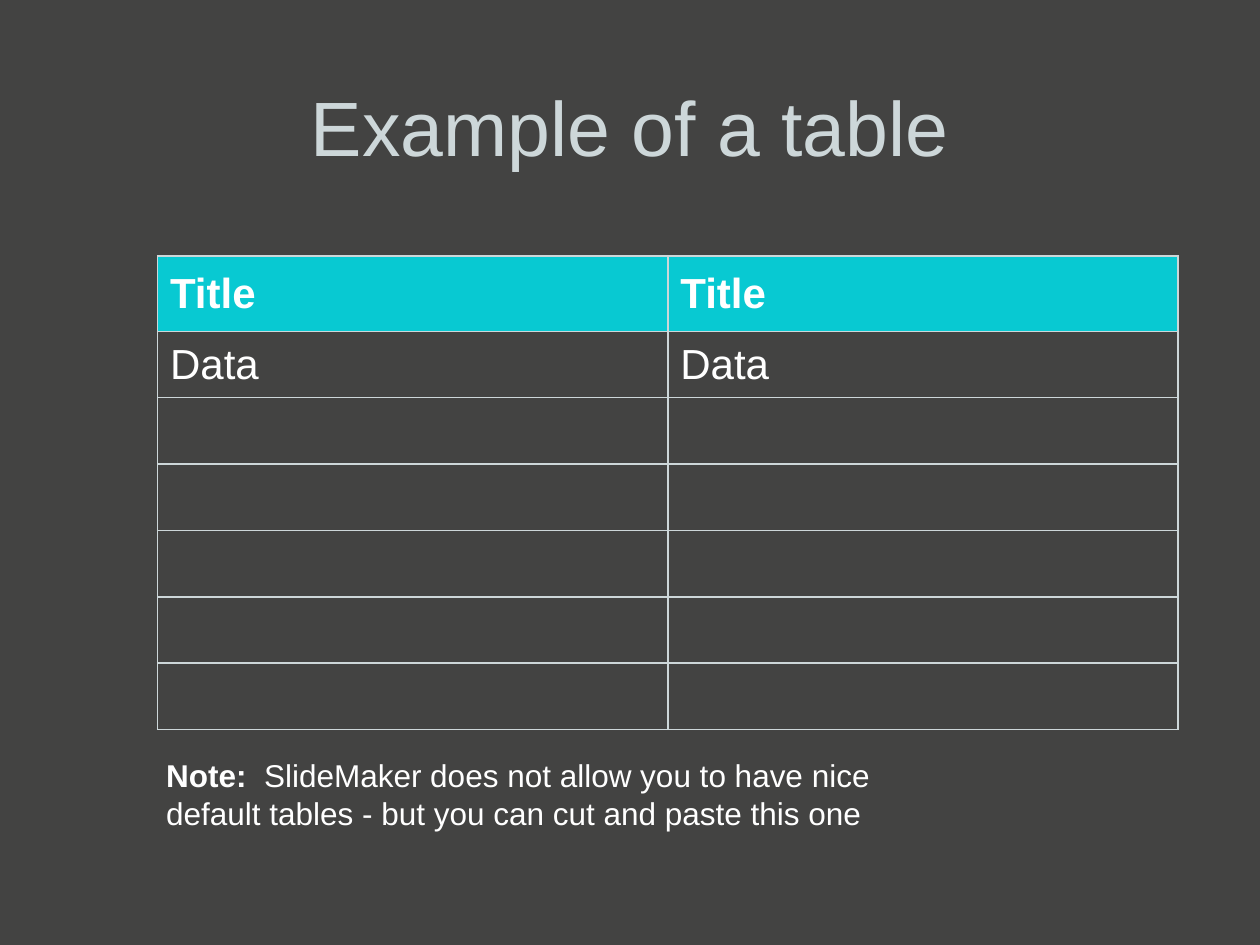
from lxml import etree
from pptx import Presentation
from pptx import util as u
from pptx.dml.color import RGBColor
from pptx.enum import text
from pptx.oxml import ns

COLOURS = {"background": "434342", "pale": "CDD7D9", "header": "08C9D2", "white": "FFFFFF"}
FONT = "Arial"


def add_span(para, words, size, colour, bold=False):
    span = para.add_run()
    span.text = words
    span.font.name = FONT
    span.font.size = u.Pt(size)
    span.font.bold = bold
    span.font.color.rgb = RGBColor.from_string(COLOURS[colour])


def add_borders(cell, colour, width):
    properties = cell._tc.get_or_add_tcPr()
    for index, side in enumerate(("lnL", "lnR", "lnT", "lnB")):
        line = etree.Element(ns.qn("a:" + side), w=str(u.Pt(width)))
        fill = etree.SubElement(line, ns.qn("a:solidFill"))
        etree.SubElement(fill, ns.qn("a:srgbClr"), val=COLOURS[colour])
        properties.insert(index, line)


deck = Presentation()
deck.slide_width, deck.slide_height = u.Inches(10), u.Inches(7.5)
page = deck.slides.add_slide(deck.slide_layouts[5])
page.background.fill.solid()
page.background.fill.fore_color.rgb = RGBColor.from_string(COLOURS["background"])

# Title
title = page.shapes.title
title.left, title.top = u.Inches(0.5), u.Inches(0.37)
title.width, title.height = u.Inches(9), u.Inches(1.25)
title.text_frame.vertical_anchor = text.MSO_ANCHOR.MIDDLE
para = title.text_frame.paragraphs[0]
para.alignment = text.PP_ALIGN.CENTER
add_span(para, "Example of a table", 44, "pale")

# Table: a header row above equal data rows
row_count, column_count = 7, 2
header_height, row_height, column_width = 0.6, 0.527, 4.05
row_words = ["Title", "Data"]
table = page.shapes.add_table(
    row_count, column_count, u.Inches(1.25), u.Inches(2.03),
    u.Inches(column_count * column_width),
    u.Inches(header_height + (row_count - 1) * row_height)).table
table.horz_banding = False
for column in table.columns:
    column.width = u.Inches(column_width)
for number, row in enumerate(table.rows):
    is_header = number == 0
    row.height = u.Inches(header_height if is_header else row_height)
    for cell in row.cells:
        cell.vertical_anchor = text.MSO_ANCHOR.MIDDLE
        if is_header:
            cell.fill.solid()
            cell.fill.fore_color.rgb = RGBColor.from_string(COLOURS["header"])
        else:
            cell.fill.background()
        add_borders(cell, "pale", 1)
        if number < len(row_words):
            add_span(cell.text_frame.paragraphs[0], row_words[number], 24, "white", is_header)

# Note below the table
box = page.shapes.add_textbox(u.Inches(1.22), u.Inches(5.95), u.Inches(6.15), u.Inches(0.71))
box.text_frame.word_wrap = True
box.text_frame.auto_size = text.MSO_AUTO_SIZE.SHAPE_TO_FIT_TEXT
para = box.text_frame.paragraphs[0]
add_span(para, "Note:  ", 18, "white", True)
add_span(para, "SlideMaker does not allow you to have nice default tables"
         " - but you can cut and paste this one", 18, "white")

deck.save("out.pptx")
